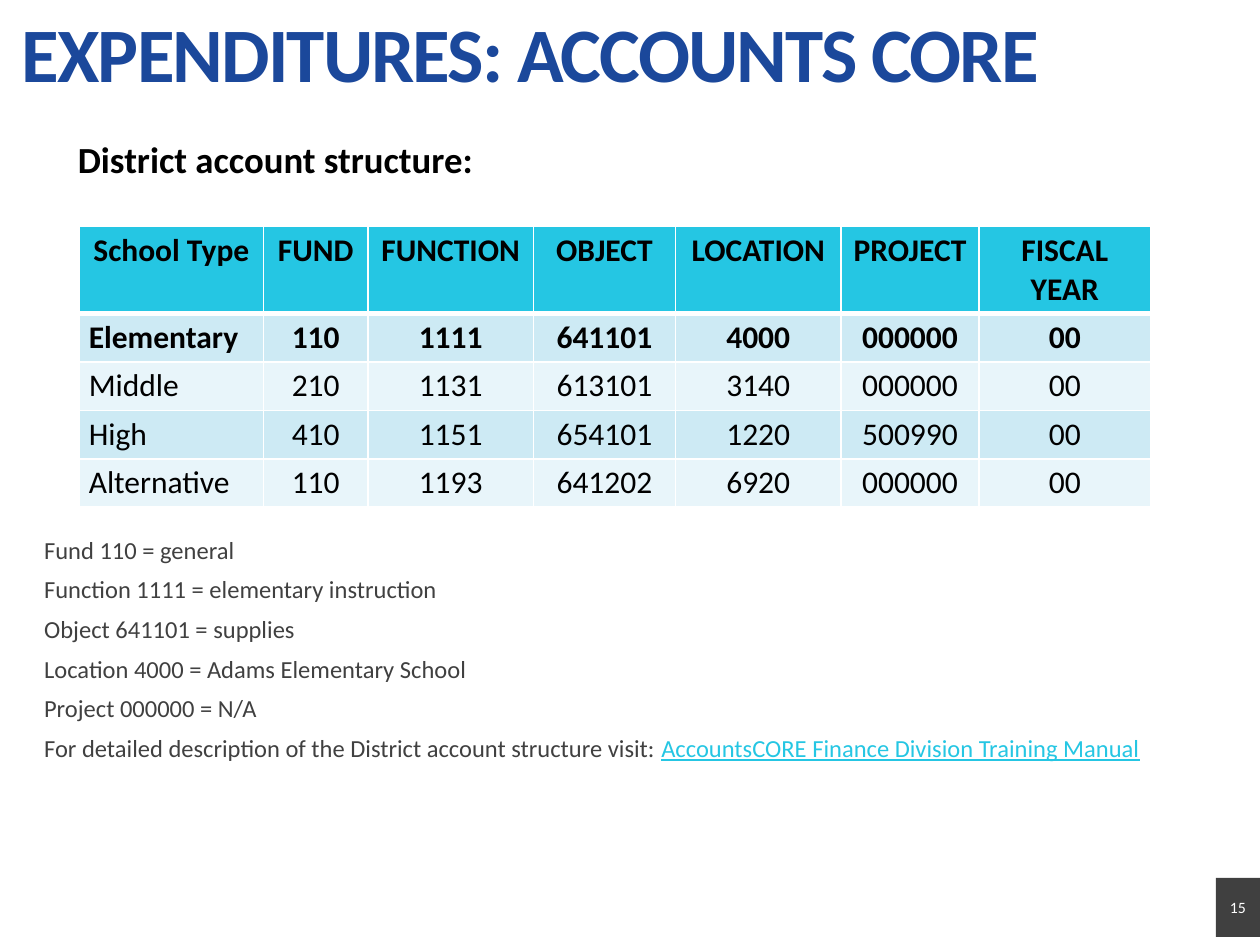
from dataclasses import dataclass

from lxml import etree
from pptx import Presentation
from pptx.dml.color import RGBColor
from pptx.enum.shapes import MSO_SHAPE
from pptx.enum.text import MSO_ANCHOR, MSO_AUTO_SIZE, PP_ALIGN
from pptx.oxml.ns import qn
from pptx.util import Cm, Pt

LEFT, CENTER = PP_ALIGN.LEFT, PP_ALIGN.CENTER
TOP, MIDDLE = MSO_ANCHOR.TOP, MSO_ANCHOR.MIDDLE
NO_AUTOFIT = MSO_AUTO_SIZE.NONE
RECTANGLE = MSO_SHAPE.RECTANGLE
TITLE_ONLY = 5


@dataclass(frozen=True)
class Theme:
    font: str = "Calibri"
    blue: str = "1B489B"
    cyan: str = "25C6E3"
    band_dark: str = "CDEAF4"
    band_light: str = "E8F5FA"
    gray: str = "404040"
    black: str = "000000"
    white: str = "FFFFFF"
    title_size: int = 44
    heading_size: int = 21
    table_size: int = 18
    note_size: int = 14
    number_size: int = 9


class SlideBuilder:
    def __init__(self, slide, theme):
        self.slide = slide
        self.theme = theme

    def add_run(self, paragraph, text, size, color, bold=False, underline=False):
        run = paragraph.add_run()
        run.text = text
        font = run.font
        font.name = self.theme.font
        font.size = Pt(size)
        font.bold = bold
        font.underline = underline
        font.color.rgb = RGBColor.from_string(color)
        return run

    def format_frame(self, frame, margins, anchor=TOP):
        frame.word_wrap = True
        frame.auto_size = NO_AUTOFIT
        frame.vertical_anchor = anchor
        frame.margin_left = frame.margin_right = Cm(margins[0])
        frame.margin_top = frame.margin_bottom = Cm(margins[1])

    def title(self, text, left, top, width, height):
        shape = self.slide.shapes.title
        shape.left, shape.top = Cm(left), Cm(top)
        shape.width, shape.height = Cm(width), Cm(height)
        self.format_frame(shape.text_frame, (0.19, 0.1))
        paragraph = shape.text_frame.paragraphs[0]
        paragraph.alignment = LEFT
        paragraph.line_spacing = 0.9
        run = self.add_run(paragraph, text, self.theme.title_size, self.theme.blue, bold=True)
        run.font._element.set("spc", "-110")

    def text_box(self, left, top, width, height, margins):
        shape = self.slide.shapes.add_textbox(Cm(left), Cm(top), Cm(width), Cm(height))
        self.format_frame(shape.text_frame, margins)
        return shape.text_frame

    def heading(self, text, left, top, width, height):
        frame = self.text_box(left, top, width, height, (0.25, 0.13))
        self.add_run(frame.paragraphs[0], text, self.theme.heading_size, self.theme.black, bold=True)

    def notes(self, lines, reference, left, top, width, height):
        theme = self.theme
        frame = self.text_box(left, top, width, height, (0, 0))
        for index, line in enumerate(lines):
            paragraph = frame.add_paragraph() if index else frame.paragraphs[0]
            paragraph.line_spacing = 0.9
            if index:
                paragraph.space_before = Pt(7.5)
            self.add_run(paragraph, line, theme.note_size, theme.gray)
        self.add_run(paragraph, reference, theme.note_size, theme.cyan, underline=True)

    def cell_borders(self, cell, widths):
        properties = cell._tc.get_or_add_tcPr()
        for side, width in widths.items():
            line = etree.SubElement(properties, qn(f"a:ln{side}"), w=str(Pt(width)))
            fill = etree.SubElement(line, qn("a:solidFill"))
            etree.SubElement(fill, qn("a:srgbClr"), val=self.theme.white)

    def table(self, rows, left, top, column_widths, row_heights):
        theme = self.theme
        table = self.slide.shapes.add_table(
            len(rows), len(column_widths), Cm(left), Cm(top),
            Cm(sum(column_widths)), Cm(sum(row_heights)),
        ).table
        for column, width in zip(table.columns, column_widths):
            column.width = Cm(width)
        for row, height in zip(table.rows, row_heights):
            row.height = Cm(height)
        for row_index, values in enumerate(rows):
            is_header = row_index == 0
            band = theme.band_dark if row_index % 2 else theme.band_light
            borders = {
                "L": 1, "R": 1,
                "T": 3 if row_index == 1 else 1,
                "B": 3 if is_header else 1,
            }
            for column_index, value in enumerate(values):
                cell = table.cell(row_index, column_index)
                self.cell_borders(cell, borders)
                cell.fill.solid()
                cell.fill.fore_color.rgb = RGBColor.from_string(theme.cyan if is_header else band)
                cell.margin_left = cell.margin_right = Cm(0.19)
                cell.margin_top = cell.margin_bottom = Cm(0.1)
                paragraph = cell.text_frame.paragraphs[0]
                paragraph.alignment = CENTER if is_header or column_index else LEFT
                self.add_run(paragraph, value, theme.table_size, theme.black, bold=row_index < 2)

    def page_number(self, text, left, top, width, height):
        theme = self.theme
        shape = self.slide.shapes.add_shape(RECTANGLE, Cm(left), Cm(top), Cm(width), Cm(height))
        shape.shadow.inherit = False
        shape.fill.solid()
        shape.fill.fore_color.rgb = RGBColor.from_string(theme.gray)
        shape.line.fill.background()
        self.format_frame(shape.text_frame, (0, 0), MIDDLE)
        paragraph = shape.text_frame.paragraphs[0]
        paragraph.alignment = CENTER
        self.add_run(paragraph, text, theme.number_size, theme.white)


ACCOUNTS = [
    ("School Type", "FUND", "FUNCTION", "OBJECT", "LOCATION", "PROJECT", "FISCAL YEAR"),
    ("Elementary", "110", "1111", "641101", "4000", "000000", "00"),
    ("Middle", "210", "1131", "613101", "3140", "000000", "00"),
    ("High", "410", "1151", "654101", "1220", "500990", "00"),
    ("Alternative", "110", "1193", "641202", "6920", "000000", "00"),
]

CODE_NOTES = [
    "Fund 110 = general",
    "Function 1111 = elementary instruction",
    "Object 641101 = supplies",
    "Location 4000 = Adams Elementary School",
    "Project 000000 = N/A",
    "For detailed description of the District account structure visit: ",
]


def main():
    presentation = Presentation()
    presentation.slide_width, presentation.slide_height = Cm(25.4), Cm(19.05)
    slide = presentation.slides.add_slide(presentation.slide_layouts[TITLE_ONLY])
    builder = SlideBuilder(slide, Theme())
    builder.title("EXPENDITURES: ACCOUNTS CORE", 0.25, 0.23, 23.83, 1.47)
    builder.notes(CODE_NOTES, "AccountsCORE Finance Division Training Manual", 0.89, 10.85, 23.6, 6.42)
    builder.heading("District account structure:", 1.32, 2.62, 23.37, 2.18)
    builder.table(
        ACCOUNTS, 1.6, 4.57,
        [3.71, 2.11, 3.33, 2.87, 3.33, 2.79, 3.45],
        [1.73] + [0.95] * 4,
    )
    builder.page_number("15", 24.51, 17.7, 0.89, 1.19)
    presentation.save("out.pptx")


if __name__ == "__main__":
    main()
